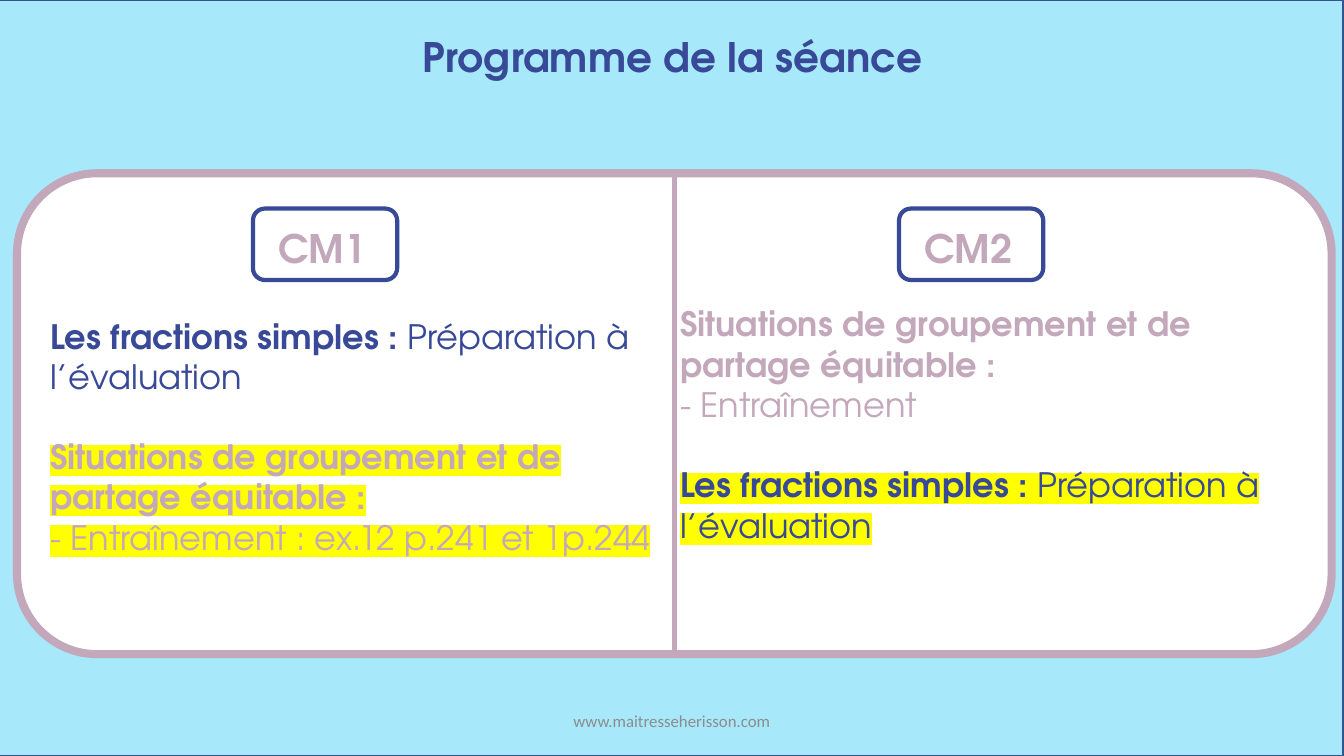
import pptx
import pptx.util
import pptx.dml.color
import pptx.enum.shapes
import pptx.enum.text
import pptx.oxml
import pptx.oxml.ns

Pt = pptx.util.Pt
COLORS = {
    "sky": "A7E8FB",
    "edge": "325491",
    "white": "FFFFFF",
    "mauve": "C3A7BA",
    "navy": "374997",
    "grey": "8C8C8C",
    "yellow": "FFFF00",
}


def rgb(name):
    """Return the named palette colour."""
    return pptx.dml.color.RGBColor.from_string(COLORS[name])


def add_run(p, text, size=24, color="navy", bold=False, font="TeX Gyre Adventor", highlight=None):
    """Add a formatted run to a paragraph."""
    r = p.add_run()
    r.text = text
    r.font.size = Pt(size)
    r.font.bold = bold
    r.font.name = font
    r.font.color.rgb = rgb(color)
    if highlight:
        mark = pptx.oxml.parse_xml(
            f'<a:highlight {pptx.oxml.ns.nsdecls("a")}>'
            f'<a:srgbClr val="{COLORS[highlight]}"/></a:highlight>'
        )
        fill = r.font._element.find(pptx.oxml.ns.qn("a:solidFill"))
        fill.addnext(mark)


class SlideBuilder:
    """Draw styled elements on the current slide."""

    def __init__(self, slide):
        """Keep the slide to draw on."""
        self.s = slide

    def box(self, x, y, w, h, fill, line, weight, kind="ROUNDED_RECTANGLE"):
        """Add a filled and outlined shape."""
        shape_type = getattr(pptx.enum.shapes.MSO_SHAPE, kind)
        sp = self.s.shapes.add_shape(shape_type, Pt(x), Pt(y), Pt(w), Pt(h))
        sp.shadow.inherit = False
        sp.fill.solid()
        sp.fill.fore_color.rgb = rgb(fill)
        sp.line.color.rgb = rgb(line)
        sp.line.width = Pt(weight)

    def text(self, x, y, w, h, paragraphs, align="LEFT", anchor="TOP"):
        """Add a text box from (space before, runs) paragraphs."""
        tf = self.s.shapes.add_textbox(Pt(x), Pt(y), Pt(w), Pt(h)).text_frame
        tf.word_wrap = True
        tf.vertical_anchor = getattr(pptx.enum.text.MSO_ANCHOR, anchor)
        for i, (gap, runs) in enumerate(paragraphs):
            p = tf.add_paragraph() if i else tf.paragraphs[0]
            p.alignment = getattr(pptx.enum.text.PP_ALIGN, align)
            if gap:
                p.space_before = Pt(gap)
            for text, style in runs:
                add_run(p, text, **style)

    def line(self, x1, y1, x2, y2, color, weight):
        """Add a straight line."""
        c = self.s.shapes.add_connector(
            pptx.enum.shapes.MSO_CONNECTOR.STRAIGHT, Pt(x1), Pt(y1), Pt(x2), Pt(y2)
        )
        c.line.color.rgb = rgb(color)
        c.line.width = Pt(weight)
        c._element.spPr.append(
            pptx.oxml.parse_xml(f'<a:effectLst {pptx.oxml.ns.nsdecls("a")}/>')
        )

    def badge(self, x, label):
        """Add a framed class label."""
        self.box(x, 149, 103, 51, "white", "navy", 3)
        style = {"size": 28, "color": "mauve", "bold": True}
        self.text(x + 11, 157, 79, 41, [(0, [(label, style)])])


def fractions(gap=0, highlight=None):
    """Return the paragraph on simple fractions."""
    return [(gap, [
        ("Les fractions simples : ", {"bold": True, "highlight": highlight}),
        ("Préparation à l’évaluation", {"highlight": highlight}),
    ])]


def sharing(task, gap=0, highlight=None):
    """Return the paragraphs on grouping and sharing."""
    style = {"color": "mauve", "highlight": highlight}
    title = "Situations de groupement et de partage équitable :"
    return [(gap, [(title, {**style, "bold": True})]), (0, [(task, style)])]


def main():
    """Build and save the slide."""
    prs = pptx.Presentation()
    prs.slide_width, prs.slide_height = Pt(960), Pt(540)
    b = SlideBuilder(prs.slides.add_slide(prs.slide_layouts[6]))
    blank_line = 28.5

    b.box(-0.7, 0, 960, 540, "sky", "edge", 1, "RECTANGLE")
    b.box(12.2, 123.8, 939, 343.5, "white", "mauve", 5.75)
    b.text(0.7, 19.4, 960, 42.5,
           [(0, [("Programme de la séance", {"size": 29, "bold": True})])], "CENTER")
    b.text(318, 500.5, 324, 28.75,
           [(0, [("www.maitresseherisson.com",
                  {"size": 12, "color": "grey", "font": "Calibri"})])],
           "CENTER", "MIDDLE")

    b.badge(180.7, "CM1")
    b.badge(642.2, "CM2")
    b.text(28.8, 221.8, 452, 211, fractions()
           + sharing("- Entraînement : ex.12 p.241 et 1p.244", blank_line, "yellow"))
    b.text(478.8, 213.1, 437, 181.5, sharing("- Entraînement")
           + fractions(blank_line, "yellow"))
    b.line(481.7, 123.8, 481.7, 467.3, "mauve", 4)

    prs.save("out.pptx")


if __name__ == "__main__":
    main()
